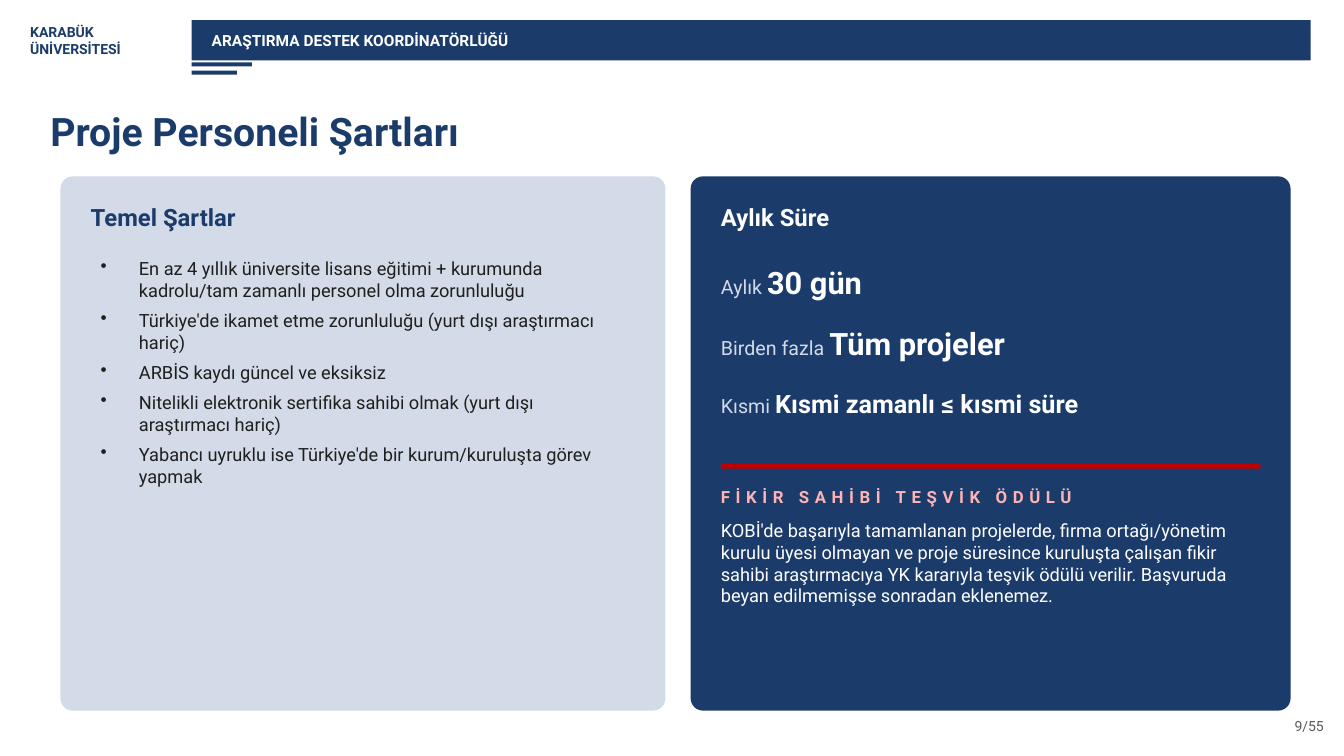
import pptx
import pptx.dml.color
import pptx.enum.shapes
import pptx.enum.text
import pptx.oxml.ns
import pptx.util
import lxml.etree

Inches = pptx.util.Inches
Pt = pptx.util.Pt
ALIGN = pptx.enum.text.PP_ALIGN
ANCHOR = pptx.enum.text.MSO_ANCHOR
SHAPE = pptx.enum.shapes.MSO_SHAPE

NAVY, PALE, WHITE = "1B3C6B", "D2DBE7", "FFFFFF"
RED, PINK, INK, GREY = "C00000", "FFB3B3", "1F1F1F", "595959"


def paint(color_format, color):
    color_format.rgb = pptx.dml.color.RGBColor.from_string(color)


def write(text, left, top, width, height, size=13, color=NAVY, bold=False,
          align=ALIGN.LEFT, anchor=ANCHOR.MIDDLE, spacing=0, bullets=False,
          emphasis="", emphasis_size=22):
    frame = slide.shapes.add_textbox(
        Inches(left), Inches(top), Inches(width), Inches(height)).text_frame
    frame.word_wrap = True
    frame.vertical_anchor = anchor
    if not bullets:
        frame.margin_left = frame.margin_right = 0
        frame.margin_top = frame.margin_bottom = 0
    lines = text.split("\n")
    for number, line in enumerate(lines):
        paragraph = frame.paragraphs[0] if number == 0 else frame.add_paragraph()
        paragraph.alignment = align
        if bullets:
            properties = paragraph._p.get_or_add_pPr()
            properties.set("marL", str(Inches(0.38)))
            properties.set("indent", str(-Inches(0.38)))
            bullet = lxml.etree.SubElement(properties, pptx.oxml.ns.qn("a:buChar"))
            bullet.set("char", "•")
            if number < len(lines) - 1:
                paragraph.space_after = Pt(6)
        pieces = [(line, size, color, bold)]
        if emphasis:
            pieces.append((emphasis, emphasis_size, WHITE, True))
        for words, points, tint, heavy in pieces:
            run = paragraph.add_run()
            run.text = words
            run.font.name = "Roboto"
            run.font.size = Pt(points)
            run.font.bold = heavy
            paint(run.font.color, tint)
            if spacing:
                run._r.get_or_add_rPr().set("spc", str(spacing * 100))


deck = pptx.Presentation()
deck.slide_width = Inches(13.33)
deck.slide_height = Inches(7.5)
slide = deck.slides.add_slide(deck.slide_layouts[6])

blocks = [
    (SHAPE.RECTANGLE, 1.9, 0.2, 11.1, 0.4, NAVY),
    (SHAPE.RECTANGLE, 1.9, 0.62, 0.6, 0.04, NAVY),
    (SHAPE.RECTANGLE, 1.9, 0.7, 0.45, 0.04, NAVY),
    (SHAPE.ROUNDED_RECTANGLE, 0.6, 1.75, 6, 5.3, PALE),
    (SHAPE.ROUNDED_RECTANGLE, 6.85, 1.75, 5.95, 5.3, NAVY),
    (SHAPE.RECTANGLE, 7.15, 4.6, 5.35, 0.05, RED),
]
for outline, left, top, width, height, color in blocks:
    block = slide.shapes.add_shape(
        outline, Inches(left), Inches(top), Inches(width), Inches(height))
    block.shadow.inherit = False
    block.fill.solid()
    paint(block.fill.fore_color, color)
    block.line.fill.background()
    if outline == SHAPE.ROUNDED_RECTANGLE:
        block.adjustments[0] = 0.023

write("KARABÜK\nÜNİVERSİTESİ", 0.3, 0.15, 1.5, 0.5, size=10, bold=True)
write("ARAŞTIRMA DESTEK KOORDİNATÖRLÜĞÜ", 2.1, 0.2, 10.9, 0.4,
      size=11, color=WHITE, bold=True)
write("9/55", 12.13, 7.05, 1, 0.3, size=10, color=GREY, align=ALIGN.RIGHT)
write("Proje Personeli Şartları", 0.5, 0.95, 12.3, 0.7, size=28, bold=True)

requirements = [
    "En az 4 yıllık üniversite lisans eğitimi + kurumunda kadrolu/tam zamanlı personel olma zorunluluğu",
    "Türkiye'de ikamet etme zorunluluğu (yurt dışı araştırmacı hariç)",
    "ARBİS kaydı güncel ve eksiksiz",
    "Nitelikli elektronik sertifika sahibi olmak (yurt dışı araştırmacı hariç)",
    "Yabancı uyruklu ise Türkiye'de bir kurum/kuruluşta görev yapmak",
]
write("Temel Şartlar", 0.9, 1.9, 5.4, 0.5, size=17, bold=True)
write("\n".join(requirements), 0.9, 2.5, 5.4, 4.4, color=INK,
      anchor=ANCHOR.TOP, bullets=True)

write("Aylık Süre", 7.15, 1.9, 5.35, 0.5, size=17, color=WHITE, bold=True)
durations = [
    ("Aylık ", "30 gün", 22),
    ("Birden fazla ", "Tüm projeler", 22),
    ("Kısmi ", "Kısmi zamanlı ≤ kısmi süre", 18),
]
for row, (label, duration, size) in enumerate(durations):
    write(label, 7.15, 2.55 + 0.6 * row, 5.35, 0.5, size=14, color=PALE,
          emphasis=duration, emphasis_size=size)

write("FİKİR SAHİBİ TEŞVİK ÖDÜLÜ", 7.15, 4.75, 5.35, 0.35,
      size=12, color=PINK, bold=True, spacing=4)
write("KOBİ'de başarıyla tamamlanan projelerde, firma ortağı/yönetim kurulu üyesi "
      "olmayan ve proje süresince kuruluşta çalışan fikir sahibi araştırmacıya YK "
      "kararıyla teşvik ödülü verilir. Başvuruda beyan edilmemişse sonradan eklenemez.",
      7.15, 5.15, 5.35, 1.7, color=WHITE, anchor=ANCHOR.TOP)

deck.save("out.pptx")
